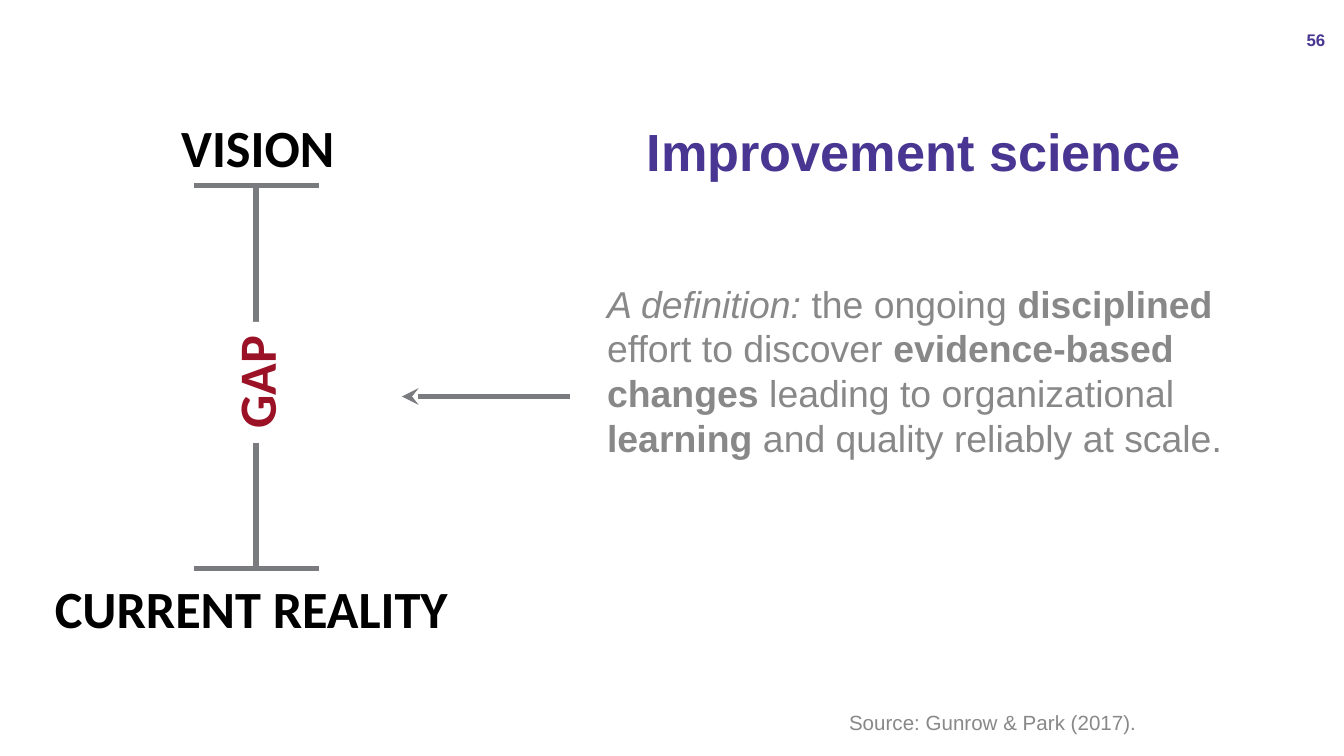
from lxml.etree import SubElement
from pptx import Presentation
from pptx.dml.color import RGBColor
from pptx.enum.shapes import MSO_CONNECTOR, MSO_SHAPE
from pptx.enum.text import MSO_ANCHOR, PP_ALIGN
from pptx.oxml.ns import qn
from pptx.util import Pt

PURPLE = "483692"
GRAY = "888888"
LINE = "797B7E"
RED = "9B1126"
BLACK = "000000"
WHITE = "FFFFFF"


def color(value):
    return RGBColor.from_string(value)


def add_run(p, text, size, font, rgb, bold=False, italic=False):
    r = p.add_run()
    r.text = text
    r.font.size = Pt(size)
    r.font.name = font
    r.font.bold = bold
    r.font.italic = italic
    r.font.color.rgb = color(rgb)


def set_text(sp, runs, size, font, rgb, align, anchor=MSO_ANCHOR.TOP):
    tf = sp.text_frame
    tf.word_wrap = True
    tf.vertical_anchor = anchor
    p = tf.paragraphs[0]
    p.alignment = align
    for text, bold, italic in runs:
        add_run(p, text, size, font, rgb, bold, italic)


def add_text(s, box, runs, size, font, rgb, align=PP_ALIGN.LEFT, anchor=MSO_ANCHOR.TOP):
    sp = s.shapes.add_textbox(*map(Pt, box))
    set_text(sp, runs, size, font, rgb, align, anchor)
    return sp


def add_panel(s, box, text, font, rgb, rotation=0):
    sp = s.shapes.add_shape(MSO_SHAPE.RECTANGLE, *map(Pt, box))
    sp.shadow.inherit = False
    sp.fill.solid()
    sp.fill.fore_color.rgb = color(WHITE)
    sp.line.fill.background()
    sp.rotation = rotation
    set_text(sp, [(text, True, False)], 28, font, rgb, PP_ALIGN.CENTER)


def add_line(s, x1, y1, x2, y2, arrow=False):
    line = s.shapes.add_connector(MSO_CONNECTOR.STRAIGHT, Pt(x1), Pt(y1), Pt(x2), Pt(y2))
    line.line.color.rgb = color(LINE)
    line.line.width = Pt(3)
    if arrow:
        SubElement(line.line._get_or_add_ln(), qn("a:tailEnd"), type="stealth")
    SubElement(line._element.spPr, qn("a:effectLst"))


def add_gap_diagram(s):
    left, right, top, bottom = 103.7, 170.7, 99.4, 304.6
    middle = (left + right) / 2
    add_text(s, (90, 58.3, 144, 41), [("VISION", True, False)], 28, "Calibri", BLACK)
    for y in (top, bottom):
        add_line(s, left, y, right, y)
    add_line(s, middle, bottom, middle, top)
    add_text(s, (22.3, 305.3, 255, 41), [("CURRENT REALITY", True, False)], 28, "Calibri", BLACK)
    add_panel(s, (104.4, 184.3, 64.8, 41), "GAP", "Calibri", RED, 270)


def add_definition(s):
    add_panel(s, (318.2, 60.5, 342.7, 51.1), "Improvement science", "Arial", PURPLE)
    runs = [
        ("A definition: ", False, True),
        ("the ongoing ", False, False),
        ("disciplined", True, False),
        (" effort to discover ", False, False),
        ("evidence-based changes", True, False),
        (" leading to organizational ", False, False),
        ("learning", True, False),
        (" and quality reliably at scale.", False, False),
    ]
    add_text(s, (318.2, 146.9, 378.7, 136.8), runs, 20, "Arial", GRAY)


def add_page_number(s):
    sp = add_text(s, (684.7, 10.8, 30.2, 21.6), [("56", True, False)], 9, "Arial", PURPLE,
                  PP_ALIGN.RIGHT, MSO_ANCHOR.MIDDLE)
    tf = sp.text_frame
    tf.margin_left = tf.margin_right = Pt(5)
    tf.margin_top = tf.margin_bottom = Pt(2.9)


def main():
    prs = Presentation()
    prs.slide_width, prs.slide_height = Pt(720), Pt(405)
    s = prs.slides.add_slide(prs.slide_layouts[6])
    add_definition(s)
    add_gap_diagram(s)
    add_line(s, 305.3, 212.4, 215.3, 212.4, arrow=True)
    add_page_number(s)
    add_text(s, (447.8, 376.6, 216, 20.9), [("Source: Gunrow & Park (2017).", False, False)],
             11, "Arial", GRAY)
    prs.save("out.pptx")


if __name__ == "__main__":
    main()
